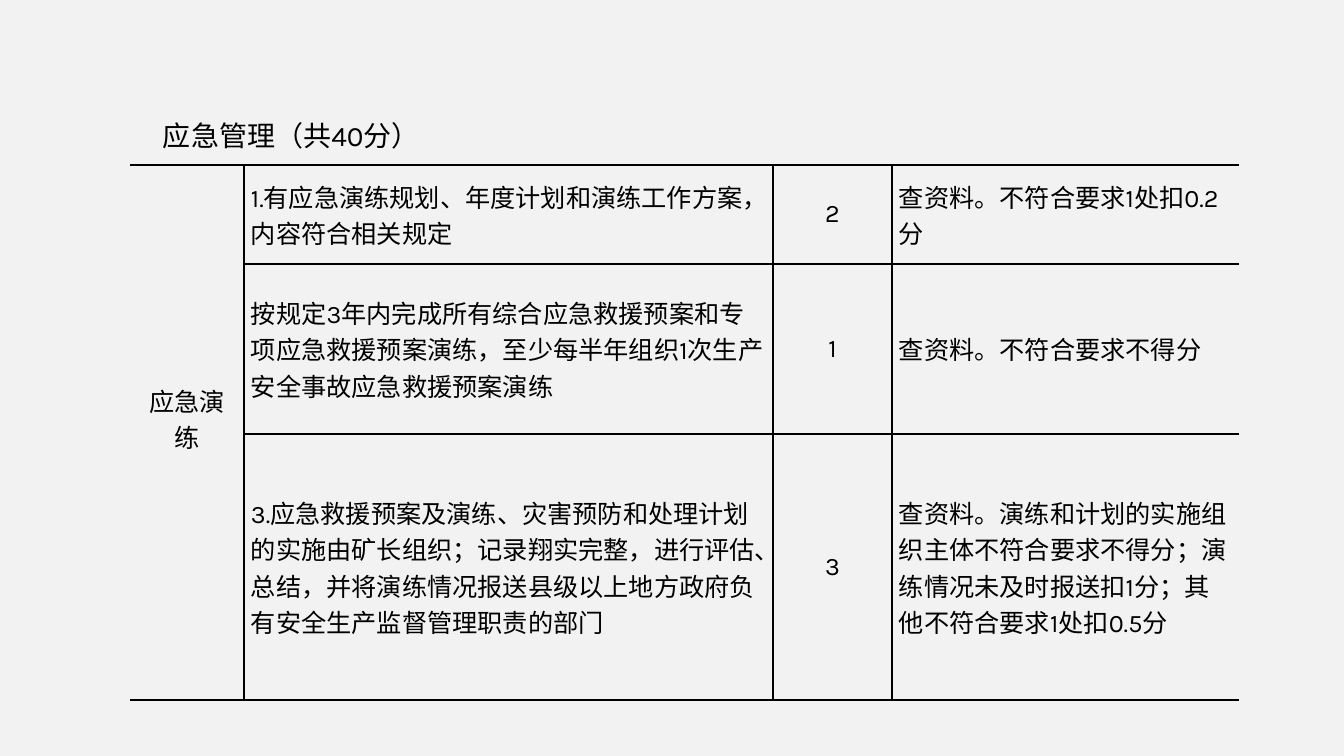
from dataclasses import dataclass

from lxml import etree
from pptx import Presentation
from pptx import util as u
from pptx.dml.color import RGBColor
from pptx.enum import lang, text
from pptx.oxml import ns

EMU_PER_PX = 914400 / 100.8
NO_GRID_STYLE = "{2D5ABB26-0587-4C30-8999-92F81FD0307C}"
TITLE_ONLY_LAYOUT = 5


@dataclass(frozen=True)
class Theme:
    font: str = "Karla"
    ink: str = "000000"
    background: str = "F2F2F2"
    title_size: int = 20
    body_size: int = 18
    line_width: int = 1


@dataclass(frozen=True)
class Column:
    width: int
    centred: bool


@dataclass(frozen=True)
class Requirement:
    height: int
    content: str
    score: str
    scoring: str


THEME = Theme()
TOPIC = "应急演练"
COLUMNS = [Column(114, True), Column(529, False), Column(119, True), Column(347, False)]
REQUIREMENTS = [
    Requirement(99, "1.有应急演练规划、年度计划和演练工作方案，内容符合相关规定",
                "2", "查资料。不符合要求1处扣0.2分"),
    Requirement(170, "按规定3年内完成所有综合应急救援预案和专项应急救援预案演练，"
                "至少每半年组织1次生产安全事故应急救援预案演练",
                "1", "查资料。不符合要求不得分"),
    Requirement(266, "3.应急救援预案及演练、灾害预防和处理计划的实施由矿长组织；"
                "记录翔实完整，进行评估、总结，并将演练情况报送县级以上地方政府"
                "负有安全生产监督管理职责的部门",
                "3", "查资料。演练和计划的实施组织主体不符合要求不得分；"
                "演练情况未及时报送扣1分；其他不符合要求1处扣0.5分"),
]


def px(length: int) -> u.Emu:
    return u.Emu(round(length * EMU_PER_PX))


def write(frame, content: str, *, size: int, centred: bool = False) -> None:
    paragraph = frame.paragraphs[0]
    paragraph.alignment = text.PP_ALIGN.CENTER if centred else text.PP_ALIGN.LEFT
    run = paragraph.add_run()
    run.text = content
    run.font.name = THEME.font
    run.font.size = u.Pt(size)
    run.font.color.rgb = RGBColor.from_string(THEME.ink)
    run.font.language_id = lang.MSO_LANGUAGE_ID.SIMPLIFIED_CHINESE


def add_borders(cell, sides: str) -> None:
    """Rule the given sides, named by L, R, T and B in that order."""
    properties = cell._tc.get_or_add_tcPr()
    for side in sides:
        line = etree.SubElement(properties, ns.qn(f"a:ln{side}"), w=str(u.Pt(THEME.line_width)))
        fill = etree.SubElement(line, ns.qn("a:solidFill"))
        etree.SubElement(fill, ns.qn("a:srgbClr"), val=THEME.ink)


def add_title(slide) -> None:
    title = slide.shapes.title
    title.left, title.top, title.width, title.height = px(143), px(113), px(868), px(44)
    frame = title.text_frame
    frame.auto_size = text.MSO_AUTO_SIZE.NONE
    frame.vertical_anchor = text.MSO_ANCHOR.MIDDLE
    frame.margin_left = px(20)
    write(frame, "应急管理（共40分）", size=THEME.title_size)


def add_requirements_table(slide) -> None:
    width = sum(column.width for column in COLUMNS)
    height = sum(requirement.height for requirement in REQUIREMENTS)
    table = slide.shapes.add_table(len(REQUIREMENTS), len(COLUMNS),
                                   px(130), px(165), px(width), px(height)).table
    table.first_row = table.horz_banding = False
    table._tbl.tblPr.find(ns.qn("a:tableStyleId")).text = NO_GRID_STYLE
    for table_column, column in zip(table.columns, COLUMNS):
        table_column.width = px(column.width)
    table.cell(0, 0).merge(table.cell(len(REQUIREMENTS) - 1, 0))

    for row, requirement in enumerate(REQUIREMENTS):
        table.rows[row].height = px(requirement.height)
        contents = (TOPIC, requirement.content, requirement.score, requirement.scoring)
        for index, (column, content) in enumerate(zip(COLUMNS, contents)):
            cell = table.cell(row, index)
            if cell.is_spanned:
                continue
            left = "L" if index > 0 else ""
            right = "R" if index < len(COLUMNS) - 1 else ""
            add_borders(cell, left + right + "TB")
            cell.fill.background()
            cell.vertical_anchor = text.MSO_ANCHOR.MIDDLE
            cell.margin_left = cell.margin_right = px(7)
            cell.margin_top = 0
            cell.margin_bottom = px(28) if index == 0 else 0
            write(cell.text_frame, content, size=THEME.body_size, centred=column.centred)


def main() -> None:
    presentation = Presentation()
    presentation.slide_width, presentation.slide_height = px(1344), px(756)
    slide = presentation.slides.add_slide(presentation.slide_layouts[TITLE_ONLY_LAYOUT])
    slide.background.fill.solid()
    slide.background.fill.fore_color.rgb = RGBColor.from_string(THEME.background)
    add_title(slide)
    add_requirements_table(slide)
    presentation.save("out.pptx")


if __name__ == "__main__":
    main()
